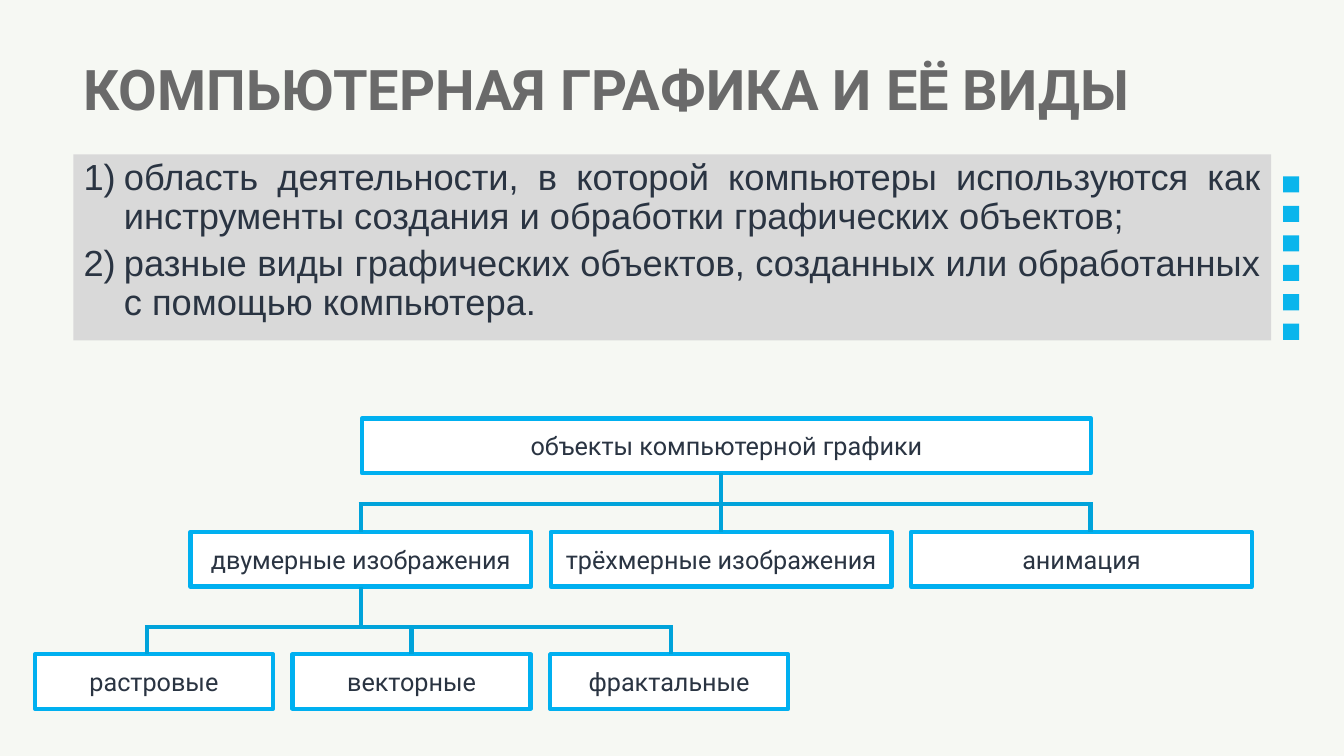
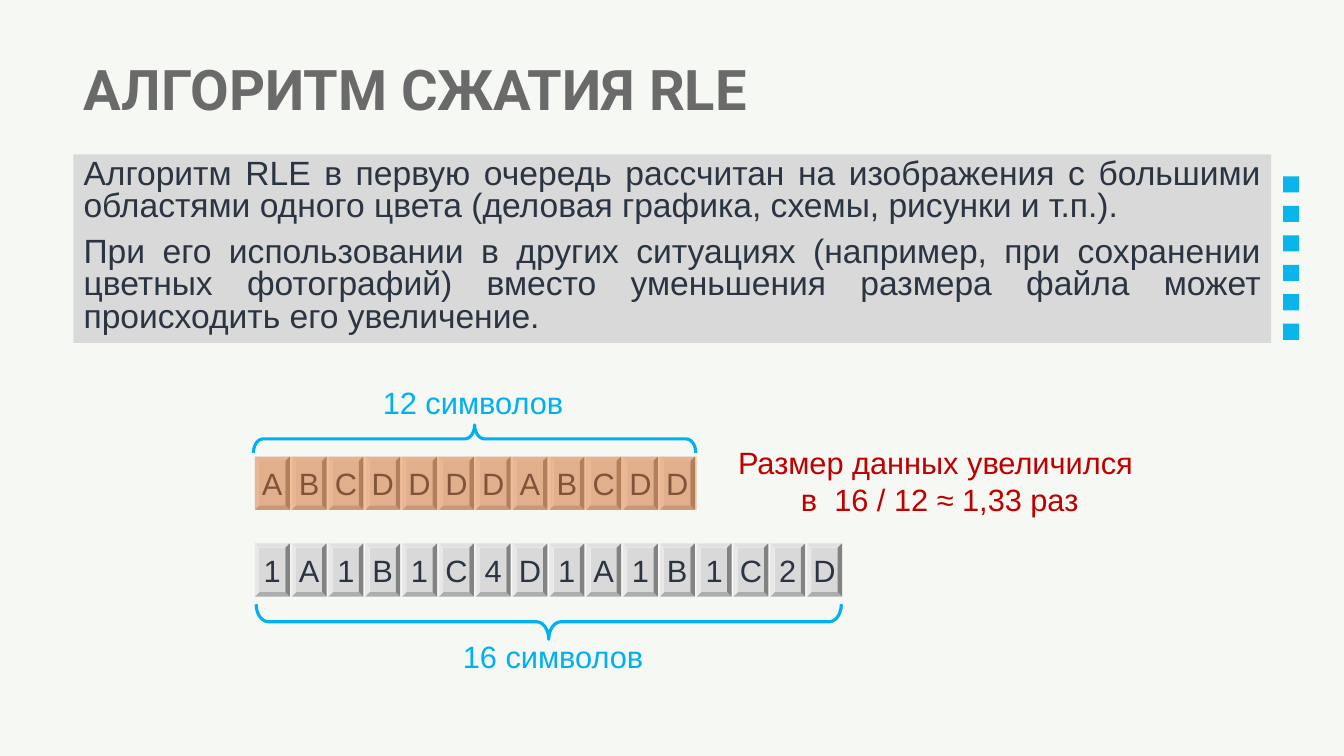
from itertools import groupby

from lxml import etree
from pptx import Presentation
from pptx.dml.color import RGBColor
from pptx.enum.shapes import MSO_CONNECTOR, MSO_SHAPE
from pptx.enum.text import MSO_ANCHOR, MSO_AUTO_SIZE, PP_ALIGN
from pptx.oxml.ns import qn
from pptx.util import Pt

RECT, BEVEL, BRACE = MSO_SHAPE.RECTANGLE, MSO_SHAPE.BEVEL, MSO_SHAPE.LEFT_BRACE
STRAIGHT = MSO_CONNECTOR.STRAIGHT
LEFT, CENTER, JUSTIFY = PP_ALIGN.LEFT, PP_ALIGN.CENTER, PP_ALIGN.JUSTIFY
TOP, MIDDLE, BOTTOM = MSO_ANCHOR.TOP, MSO_ANCHOR.MIDDLE, MSO_ANCHOR.BOTTOM

PAPER = RGBColor(0xF6, 0xF8, 0xF3)
DOT = RGBColor(0x0A, 0xB5, 0xEC)
TITLE_GRAY = RGBColor(0x6A, 0x6A, 0x6A)
PANEL = RGBColor(0xD9, 0xD9, 0xD9)
INK = RGBColor(0x2A, 0x34, 0x42)
WHITE = RGBColor(0xFF, 0xFF, 0xFF)
CYAN = RGBColor(0x00, 0xB0, 0xF0)
LINK = RGBColor(0x00, 0xA3, 0xDA)
ORANGE = RGBColor(0xED, 0x7D, 0x31)
RED = RGBColor(0xC0, 0x00, 0x00)

TITLE_FONT = {"name": "Roboto", "size": Pt(40), "bold": True}
BOX_FONT = {"name": "Roboto", "size": Pt(18)}
CODE_FONT = {"name": "Arial", "size": Pt(22)}


def write(sp, paragraphs, font, color, para, anchor, margins=None):
    """Fill a shape with evenly formatted paragraphs."""
    tf = sp.text_frame
    tf.word_wrap, tf.auto_size, tf.vertical_anchor = True, MSO_AUTO_SIZE.NONE, anchor
    if margins:
        tf.margin_left = tf.margin_right = Pt(margins[0])
        tf.margin_top = tf.margin_bottom = Pt(margins[1])
    for i, text in enumerate(paragraphs):
        p = tf.add_paragraph() if i else tf.paragraphs[0]
        p.text = text
        for key, value in para.items():
            setattr(p, key, value)
        for r in p.runs:
            for key, value in font.items():
                setattr(r.font, key, value)
            r.font.color.rgb = color


def place(sp, x, y, w, h):
    sp.left, sp.top, sp.width, sp.height = Pt(x), Pt(y), Pt(w), Pt(h)


def add_shape(s, kind, x, y, w, h, fill=None, line=None, line_width=3):
    sp = s.shapes.add_shape(kind, Pt(x), Pt(y), Pt(w), Pt(h))
    sp.shadow.inherit = False
    if fill is None:
        sp.fill.background()
    else:
        sp.fill.solid()
        sp.fill.fore_color.rgb = fill
    if line is None:
        sp.line.fill.background()
    else:
        sp.line.color.rgb = line
        sp.line.width = Pt(line_width)
    return sp


def add_line(s, x1, y1, x2, y2):
    line = s.shapes.add_connector(STRAIGHT, x1, y1, x2, y2)
    line.line.color.rgb = LINK
    line.line.width = Pt(3)
    etree.SubElement(line._element.spPr, qn("a:effectLst"))
    return line


def style_master(prs, s):
    """Background and the column of dots, shared by all slides."""
    master = prs.slide_master
    master.background.fill.solid()
    master.background.fill.fore_color.rgb = PAPER
    for i in range(6):
        dot = add_shape(s, RECT, 916.5, 126 + 21.05 * i, 11.5, 11.5, DOT)
        master.shapes._spTree.append(dot._element)


def set_bullet(p, numbered):
    pPr = p._p.get_or_add_pPr()
    indent = Pt(28.8) if numbered else 0
    pPr.set("marL", str(indent))
    pPr.set("indent", str(-indent))
    if numbered:
        etree.SubElement(pPr, qn("a:buFont")).set("typeface", "+mj-lt")
        etree.SubElement(pPr, qn("a:buAutoNum")).set("type", "arabicParenR")
    else:
        etree.SubElement(pPr, qn("a:buNone"))


def header(s, title, paragraphs, height, size, spacing, before, numbered):
    """Title and the gray text panel below it."""
    place(s.shapes.title, 52.5, 32.4, 855.4, 67)
    write(s.shapes.title, [title], TITLE_FONT, TITLE_GRAY,
          {"alignment": LEFT, "line_spacing": 0.9}, MIDDLE)
    body = s.placeholders[1]
    place(body, 52.5, 110.2, 855.4, height)
    body.fill.solid()
    body.fill.fore_color.rgb = PANEL
    write(body, paragraphs, {"name": "Arial", "size": Pt(size)}, INK,
          {"alignment": JUSTIFY, "line_spacing": spacing,
           "space_before": Pt(before)}, TOP)
    for p in body.text_frame.paragraphs:
        set_bullet(p, numbered)


def box_row(s, x, y, w, labels):
    """Row of equal labelled boxes with a fixed gap."""
    boxes = []
    for i, label in enumerate(labels):
        box = add_shape(s, RECT, x + i * (w + 14), y, w, 39, WHITE, CYAN)
        write(box, [label], BOX_FONT, INK, {"alignment": CENTER}, MIDDLE)
        boxes.append(box)
    return boxes


def branch(s, parent, trunk_x, children, rise, shifts):
    """Trunk, bar and drops; a drop shifted off the centre stays unjoined."""
    bar_y = children[0].top - Pt(rise)
    xs = [c.left + c.width // 2 + Pt(d) for c, d in zip(children, shifts)]
    add_line(s, xs[0] - Pt(1.5), bar_y, xs[-1] + Pt(1.5), bar_y)
    center = parent.left + parent.width // 2
    trunk = add_line(s, trunk_x, parent.top + parent.height, trunk_x, bar_y)
    if trunk_x == center:
        trunk.begin_connect(parent, 2)
    for child, x, shift in zip(children, xs, shifts):
        drop = add_line(s, x, bar_y, x, child.top)
        if not shift:
            drop.end_connect(child, 0)


def graphics_tree(s, x, y):
    root, = box_row(s, x + 233.5, y, 521, ["объекты компьютерной графики"])
    kinds = box_row(s, x + 111, y + 81, 243.4,
                    ["двумерные изображения", "трёхмерные изображения", "анимация"])
    flat = box_row(s, x, y + 168.3, 170, ["растровые", "векторные", "фрактальные"])
    branch(s, root, kinds[1].left + kinds[1].width // 2, kinds, 20, (0, 0, 6.5))
    branch(s, kinds[0], kinds[0].left + kinds[0].width // 2, flat, 19.5, (-5, 0, 1.5))


def cells(s, x, y, text, pitch):
    for i, char in enumerate(text):
        cell = add_shape(s, BEVEL, x + i * pitch, y, 25, 38, PANEL)
        write(cell, [char], CODE_FONT, INK, {"alignment": CENTER}, MIDDLE, (0, 0))


def brace(s, x, y, w, h, rotation):
    """Horizontal brace that fills the given box after rotation."""
    sp = add_shape(s, BRACE, x + (w - h) / 2, y + (h - w) / 2, h, w,
                   line=CYAN, line_width=2.25)
    sp.rotation = rotation
    sp.adjustments[0] = 0.348


def caption(s, x, y, w, h, text, color):
    sp = s.shapes.add_textbox(Pt(x), Pt(y), Pt(w), Pt(h))
    write(sp, [text], CODE_FONT, color, {"alignment": CENTER}, BOTTOM, (0, 3.6))


def rle_diagram(s, x, y):
    pitch = 26.3
    source = "ABCDDDDABCDD"
    runs = [(char, len(list(group))) for char, group in groupby(source)]
    packed = "".join(f"{n}{char}" for char, n in runs)

    # Source symbols, tinted by run
    caption(s, x + 71.4, y, 169, 28, "12 символов", CYAN)
    brace(s, x - 1, y + 27.7, 316, 20, 90)
    cells(s, x, y + 50.3, source, pitch)
    start = 0
    for _, n in runs:
        tint = add_shape(s, RECT, x + start * pitch, y + 50.3, n * pitch, 38, ORANGE)
        color = tint._element.spPr.find(qn("a:solidFill"))[0]
        etree.SubElement(color, qn("a:alpha")).set("val", "45000")
        start += n

    # Packed symbols
    cells(s, x, y + 112.3, packed, pitch)
    brace(s, x + 1, y + 155.8, 418, 25, 270)
    caption(s, x + 122.6, y + 181.4, 181, 28, "16 символов", CYAN)

    # Result
    caption(s, x + 330, y + 43.2, 312.5, 54,
            "Размер данных увеличился\n в  16 / 12 ≈ 1,33 раз", RED)


def main():
    prs = Presentation()
    prs.slide_width, prs.slide_height = Pt(960), Pt(540)
    layout = prs.slide_layouts[1]

    s = prs.slides.add_slide(layout)
    style_master(prs, s)
    header(s, "КОМПЬЮТЕРНАЯ ГРАФИКА И ЕЁ ВИДЫ", [
        "область деятельности, в которой компьютеры используются как "
        "инструменты создания и обработки графических объектов;",
        "разные виды графических объектов, созданных или обработанных "
        "с помощью компьютера.",
    ], 133, 25.9, 0.9, 5.2, True)
    graphics_tree(s, 25, 299)

    s = prs.slides.add_slide(layout)
    header(s, "АЛГОРИТМ СЖАТИЯ RLE", [
        "Алгоритм RLE в первую очередь рассчитан на изображения с большими "
        "областями одного цвета (деловая графика, схемы, рисунки и т.п.).",
        "При его использовании в других ситуациях (например, при сохранении "
        "цветных фотографий) вместо уменьшения размера файла может "
        "происходить его увеличение.",
    ], 134.7, 24, 0.8, 10, False)
    rle_diagram(s, 182, 275.8)

    prs.save("out.pptx")


if __name__ == "__main__":
    main()
